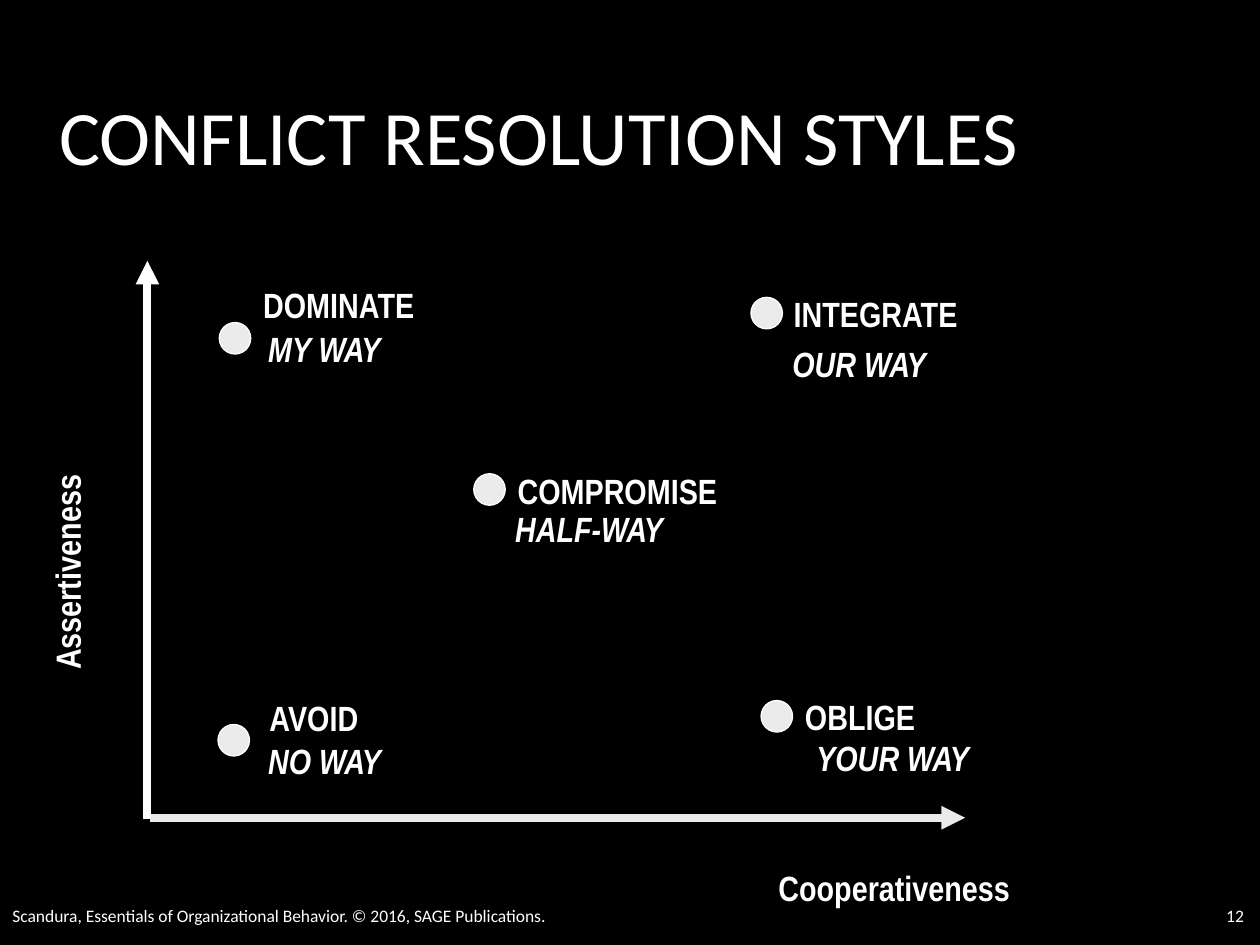
from collections import namedtuple

from lxml.etree import SubElement
from pptx import Presentation
from pptx.dml.color import RGBColor
from pptx.enum.shapes import MSO_CONNECTOR as CONNECTOR, MSO_SHAPE as SHAPE
from pptx.enum.text import MSO_ANCHOR as ANCHOR, PP_ALIGN as ALIGN
from pptx.oxml.ns import qn
from pptx.util import Inches, Pt

BLACK = RGBColor(0x00, 0x00, 0x00)
WHITE = RGBColor(0xFF, 0xFF, 0xFF)
PALE_GRAY = RGBColor(0xEB, 0xEB, 0xEB)
LABEL_FONT = "Arial Narrow"
BODY_FONT = "Calibri"
DOT_SIZE = 0.25
LABEL_HEIGHT = 0.44

Box = namedtuple("Box", "left top width height")
Label = namedtuple("Label", "text dx dy width")
Style = namedtuple("Style", "x y name slogan")

STYLES = [
    Style(2.59, 1.69, Label("COMPROMISE", 0.25, -0.08, 1.86), Label("HALF-WAY", 0.23, 0.22, 1.39)),
    Style(4.87, 3.49, Label("OBLIGE", 0.25, -0.09, 1.15), Label("YOUR WAY", 0.34, 0.24, 1.49)),
    Style(4.79, 0.29, Label("INTEGRATE", 0.24, -0.09, 1.52), Label("OUR WAY", 0.23, 0.31, 1.33)),
    Style(0.56, 3.68, Label("AVOID", 0.31, -0.27, 0.97), Label("NO WAY", 0.3, 0.07, 1.38)),
    Style(0.57, 0.49, Label("DOMINATE", 0.25, -0.36, 1.48), Label("MY WAY", 0.29, -0.01, 1.16)),
]


def add_text(shapes, box, text, size, font_name, bold=False, italic=False,
             anchor=ANCHOR.TOP, align=ALIGN.LEFT):
    """Place one line of white text in the box and return its shape."""
    text_box = shapes.add_textbox(*map(Inches, box))
    frame = text_box.text_frame
    frame.word_wrap = True
    frame.vertical_anchor = anchor
    frame.text = text
    paragraph = frame.paragraphs[0]
    paragraph.alignment = align
    font = paragraph.runs[0].font
    font.name, font.size = font_name, Pt(size)
    font.bold, font.italic = bold, italic
    font.color.rgb = WHITE
    return text_box


def add_label(shapes, box, text, italic=False):
    """Place a bold diagram label in the box."""
    return add_text(shapes, box, text, 20, LABEL_FONT, True, italic)


def add_axis(shapes, start, end, color):
    """Draw a thick axis with an arrowhead at its end."""
    axis = shapes.add_connector(CONNECTOR.STRAIGHT, *map(Inches, start + end))
    axis.line.color.rgb = color
    axis.line.width = Pt(4.5)
    SubElement(axis.line._get_or_add_ln(), qn("a:tailEnd"), type="triangle")
    SubElement(axis._element.spPr, qn("a:effectLst"))


def add_style(shapes, box, style):
    """Group a dot with the name and slogan of one conflict style."""
    group = shapes.add_group_shape().shapes
    dot = group.add_shape(SHAPE.OVAL, *map(Inches, box))
    dot.shadow.inherit = False
    dot.fill.solid()
    dot.fill.fore_color.rgb = PALE_GRAY
    dot.line.color.rgb = WHITE
    dot.line.width = Pt(0.75)
    for label, italic in ((style.name, False), (style.slogan, True)):
        label_box = Box(box.left + label.dx, box.top + label.dy, label.width, LABEL_HEIGHT)
        add_label(group, label_box, label.text, italic)


def add_diagram(shapes, box):
    """Draw the axes, their labels and the five styles in the box."""
    right, bottom = box.left + box.width, box.top + box.height
    add_label(shapes, Box(right - 1.58, bottom + 0.33, 2.13, LABEL_HEIGHT), "Cooperativeness")
    assertiveness = add_label(
        shapes, Box(box.left - 1.55, box.top + 2.21, 1.83, LABEL_HEIGHT), "Assertiveness")
    assertiveness.rotation = 270
    for style in STYLES:
        dot_box = Box(box.left + style.x, box.top + style.y, DOT_SIZE, DOT_SIZE)
        add_style(shapes, dot_box, style)
    add_axis(shapes, (box.left + 0.02, bottom - 0.01), (right, bottom - 0.01), PALE_GRAY)
    add_axis(shapes, (box.left, bottom), (box.left, box.top), WHITE)


def add_title(shapes, box):
    """Place the slide title in the box."""
    add_text(shapes, box, "CONFLICT RESOLUTION STYLES", 44, BODY_FONT, anchor=ANCHOR.MIDDLE)


def add_footer(shapes, box):
    """Place the source line and the slide number at the ends of the box."""
    source = "Scandura, Essentials of Organizational Behavior. © 2016, SAGE Publications."
    add_text(shapes, box._replace(width=6.42), source, 10, BODY_FONT, anchor=ANCHOR.MIDDLE)
    number_box = box._replace(left=box.left + box.width - 0.45, width=0.45)
    add_text(shapes, number_box, "12", 10, BODY_FONT, anchor=ANCHOR.MIDDLE, align=ALIGN.RIGHT)


def main():
    """Build the slide and save it."""
    presentation = Presentation()
    presentation.slide_width, presentation.slide_height = Inches(10), Inches(7.5)
    slide = presentation.slides.add_slide(presentation.slide_layouts[6])
    slide.background.fill.solid()
    slide.background.fill.fore_color.rgb = BLACK
    add_diagram(slide.shapes, Box(1.17, 2.07, 6.49, 4.43))
    add_title(slide.shapes, Box(0.37, 0.27, 8.31, 1.59))
    add_footer(slide.shapes, Box(0, 7.06, 9.97, 0.41))
    presentation.save("out.pptx")


if __name__ == "__main__":
    main()
